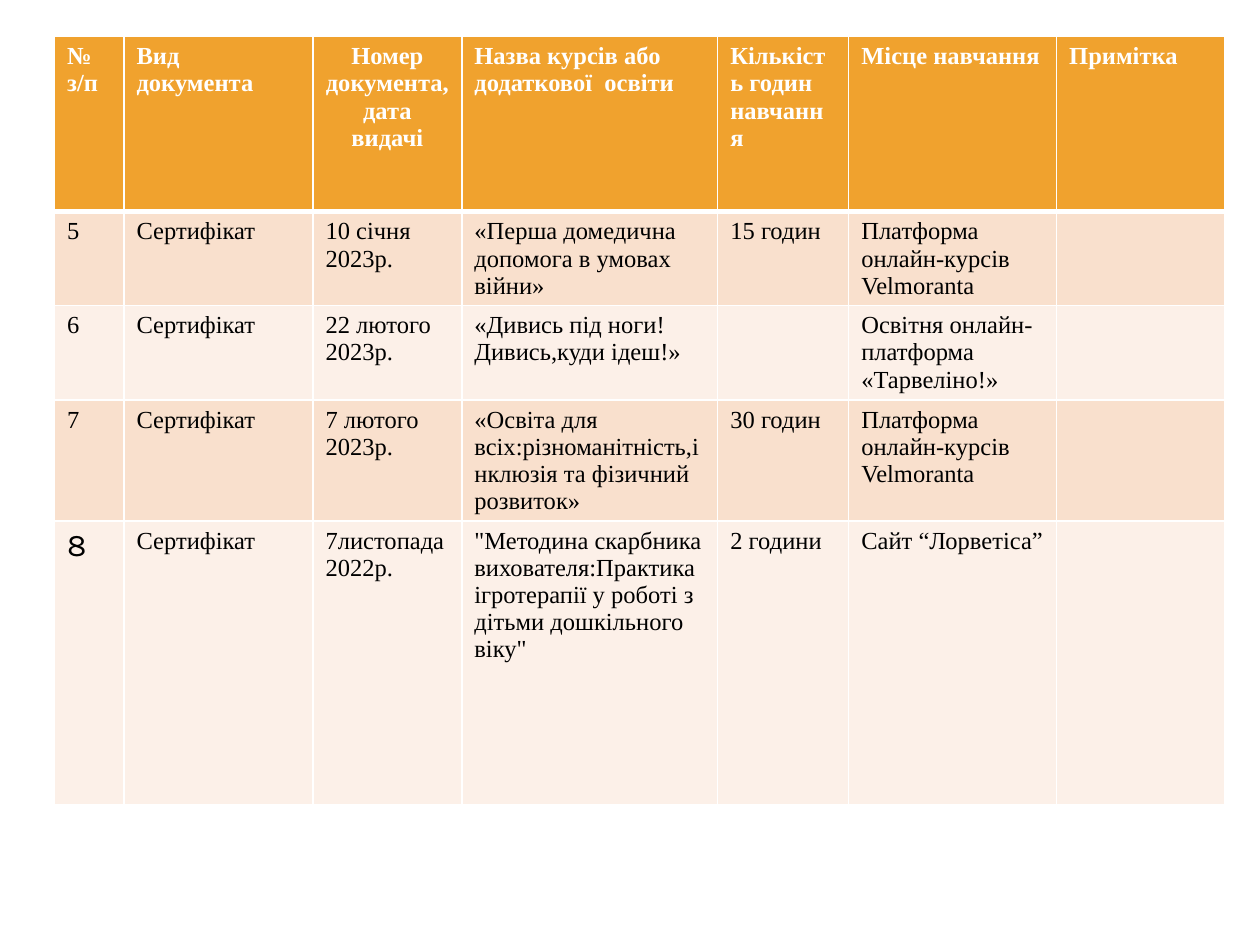
import pptx
import pptx.dml.color
import pptx.enum.text
import pptx.oxml
import pptx.oxml.ns
import pptx.util
from pptx.util import Cm

WHITE, BLACK = "FFFFFF", "000000"
HEADER_FILL = "F0A22E"
BAND_FILLS = ["F9E0CD", "FCF0E8"]
COLUMN_WIDTHS = [1.4, 3.81, 3, 5.16, 2.64, 4.19, 3.4]
ROW_HEIGHTS = [3.53, 1.89, 1.9, 2.43, 5.72]

# A line break inside a text starts a new paragraph
HEADINGS = [
    "№ з/п", "Вид документа", "Номер\nдокумента,\nдата видачі",
    "Назва курсів або додаткової  освіти", "Кількість годин навчання",
    "Місце навчання", "Примітка",
]
NUMBER_COLUMN = 0
DOCUMENT_COLUMN = 2
COURSES = [
    ["5", "Сертифікат", "10 січня 2023р.",
     "«Перша домедична допомога в умовах війни»", "15 годин",
     "Платформа онлайн-курсів\nVelmoranta", ""],
    ["6", "Сертифікат", "22 лютого\n2023р.",
     "«Дивись під ноги!Дивись,куди ідеш!»", "",
     "Освітня онлайн-платформа «Тарвеліно!»", ""],
    ["7", "Сертифікат", "7 лютого 2023р.",
     "«Освіта для всіх:різноманітність,інклюзія та фізичний розвиток»",
     "30 годин", "Платформа онлайн-курсів\nVelmoranta", ""],
    ["8", "Сертифікат", "7листопада\n2022р.",
     "\"Методина скарбника вихователя:Практика ігротерапії у роботі з "
     "дітьми дошкільного віку\"", "2 години", "Сайт “Лорветіса”", ""],
]


def rgb(value):
    return pptx.dml.color.RGBColor.from_string(value)


def set_borders(cell, top=1, bottom=1):
    """Draw white borders, with widths in points."""
    properties = cell._tc.get_or_add_tcPr()
    for side, width in (("L", 1), ("R", 1), ("T", top), ("B", bottom)):
        properties.append(pptx.oxml.parse_xml(
            f'<a:ln{side} {pptx.oxml.ns.nsdecls("a")} w="{pptx.util.Pt(width)}">'
            f'<a:solidFill><a:srgbClr val="{WHITE}"/></a:solidFill></a:ln{side}>'))


def set_fill(cell, color):
    cell.fill.solid()
    cell.fill.fore_color.rgb = rgb(color)


def write_text(cell, text, color, bold=False, centered=False,
               font="Times New Roman", size=14):
    frame = cell.text_frame
    for index, line in enumerate(text.split("\n")):
        paragraph = frame.add_paragraph() if index else frame.paragraphs[0]
        if centered:
            paragraph.alignment = pptx.enum.text.PP_ALIGN.CENTER
        if not line:
            continue
        run = paragraph.add_run()
        run.text = line
        run.font.name = font
        run.font.size = pptx.util.Pt(size)
        run.font.bold = bold
        run.font.color.rgb = rgb(color)


def add_course_table(slide):
    table = slide.shapes.add_table(
        len(ROW_HEIGHTS), len(COLUMN_WIDTHS), Cm(1.1), Cm(0.74),
        Cm(sum(COLUMN_WIDTHS)), Cm(sum(ROW_HEIGHTS))).table
    for column, width in zip(table.columns, COLUMN_WIDTHS):
        column.width = Cm(width)
    for row, height in zip(table.rows, ROW_HEIGHTS):
        row.height = Cm(height)
    return table


def fill_header(table):
    for column, heading in enumerate(HEADINGS):
        cell = table.cell(0, column)
        set_borders(cell, bottom=3)
        set_fill(cell, HEADER_FILL)
        write_text(cell, heading, WHITE, bold=True,
                   centered=column == DOCUMENT_COLUMN)


def fill_courses(table):
    for row, course in enumerate(COURSES, start=1):
        for column, text in enumerate(course):
            cell = table.cell(row, column)
            set_borders(cell, top=3 if row == 1 else 1)
            set_fill(cell, BAND_FILLS[(row - 1) % 2])
            # The last course number has its own typeface
            if row == len(COURSES) and column == NUMBER_COLUMN:
                write_text(cell, text, BLACK, font="Karla", size=18)
            else:
                write_text(cell, text, BLACK)


def main():
    presentation = pptx.Presentation()
    presentation.slide_width = Cm(25.4)
    presentation.slide_height = Cm(19.05)
    slide = presentation.slides.add_slide(presentation.slide_layouts[6])

    # Table of completed courses
    course_table = add_course_table(slide)
    fill_header(course_table)
    fill_courses(course_table)

    presentation.save("out.pptx")


if __name__ == "__main__":
    main()
